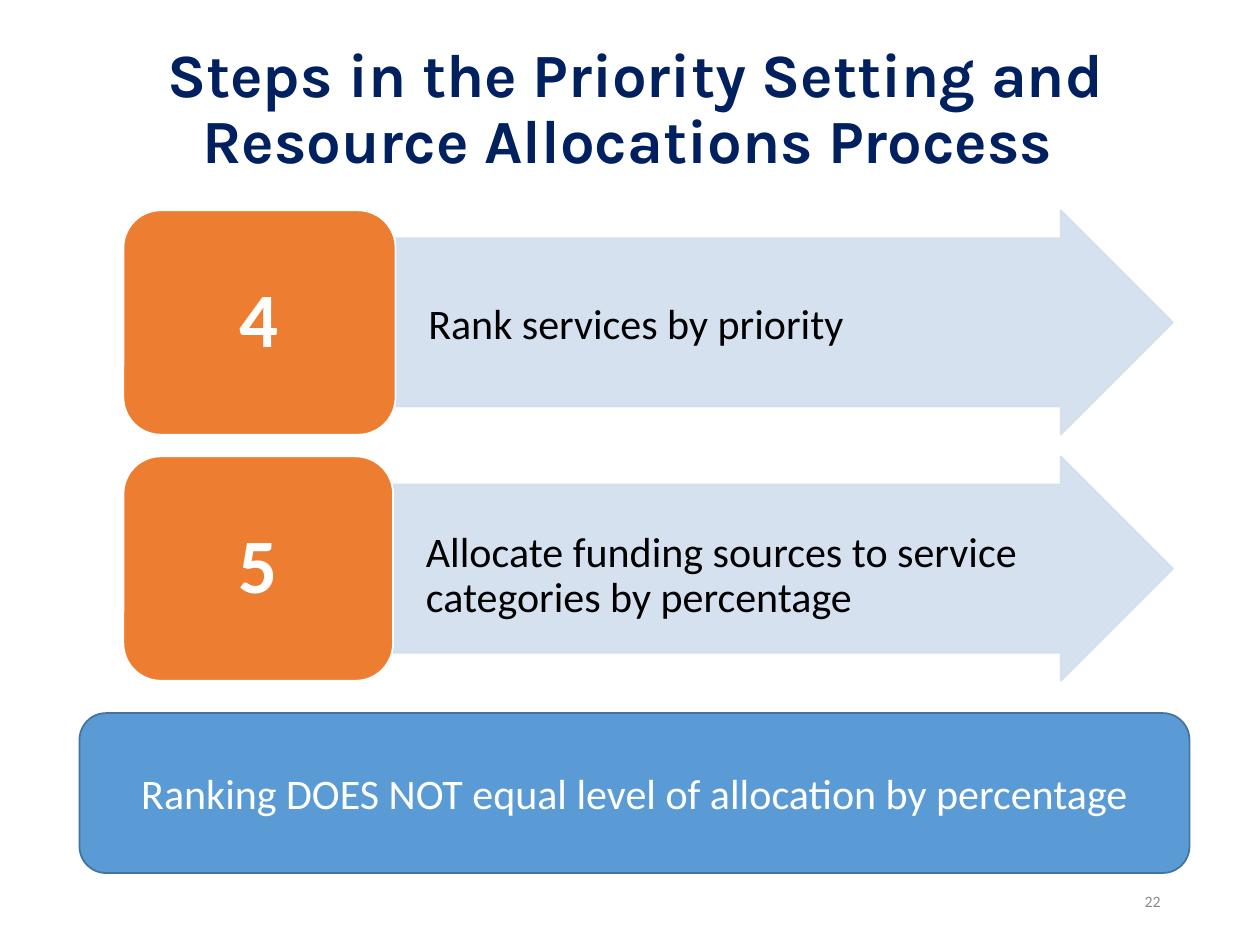
from dataclasses import dataclass

import pptx
import pptx.dml.color
import pptx.enum.shapes
import pptx.enum.text
import pptx.oxml.ns
import pptx.util
from lxml import etree

Pt = pptx.util.Pt
PRESET = pptx.enum.shapes.MSO_SHAPE
ALIGN = pptx.enum.text.PP_ALIGN
MIDDLE = pptx.enum.text.MSO_ANCHOR.MIDDLE

STEP_LEFT, STEP_RIGHT = 70.56, 670.3
STEP_TOP, STEP_HEIGHT, STEP_PITCH = 120.2, 128.2, 140.6


@dataclass
class Box:
    left: float
    top: float
    width: float
    height: float


@dataclass
class Style:
    size: float
    color: str
    font: str = "Calibri"
    bold: bool = False
    align: ALIGN = ALIGN.CENTER
    line_spacing: float = 1.0
    insets: tuple[float, float, float, float] = (7.2, 3.6, 7.2, 3.6)


@dataclass
class Step:
    number: str
    action: str
    number_width: float
    line_spacing: float = 1.0
    text_drop: float = 0


def set_color(color_format, hex_color: str, opacity: int = 100) -> None:
    """Colour a solid fill; opacity is in percent."""
    color_format.solid()
    color_format.fore_color.rgb = pptx.dml.color.RGBColor.from_string(hex_color)
    if opacity < 100:
        parent = color_format._xPr
        rgb = parent.find(".//" + pptx.oxml.ns.qn("a:srgbClr"))
        etree.SubElement(rgb, pptx.oxml.ns.qn("a:alpha"), val=str(opacity * 1000))


def write(shape, text: str, style: Style) -> None:
    frame = shape.text_frame
    frame.text = text
    frame.word_wrap = True
    frame.vertical_anchor = MIDDLE
    (frame.margin_left, frame.margin_top,
     frame.margin_right, frame.margin_bottom) = map(Pt, style.insets)
    paragraph = frame.paragraphs[0]
    paragraph.alignment = style.align
    paragraph.line_spacing = style.line_spacing
    font = paragraph.runs[0].font
    font.name, font.size, font.bold = style.font, Pt(style.size), style.bold
    set_color(font.fill, style.color)


def add_label(slide, box: Box, text: str, style: Style) -> None:
    label = slide.shapes.add_textbox(Pt(box.left), Pt(box.top), Pt(box.width), Pt(box.height))
    write(label, text, style)


def add_panel(slide, preset: PRESET, box: Box, fill: str, line: str,
              text: str, style: Style, opacity: int = 100):
    panel = slide.shapes.add_shape(
        preset, Pt(box.left), Pt(box.top), Pt(box.width), Pt(box.height))
    panel.shadow.inherit = False
    set_color(panel.fill, fill, opacity)
    set_color(panel.line.fill, line, opacity)
    panel.line.width = Pt(1)
    write(panel, text, style)
    return panel


def add_step(slide, step: Step, top: float) -> None:
    arrow_left = STEP_LEFT + step.number_width
    arrow = add_panel(
        slide, PRESET.RIGHT_ARROW,
        Box(arrow_left, top, STEP_RIGHT - arrow_left, STEP_HEIGHT),
        "D2DEEF", "D2DEEF", step.action,
        Style(24, "000000", align=ALIGN.LEFT, line_spacing=step.line_spacing,
              insets=(18.7, 0.7 + step.text_drop, 0.7, 0.7)),
        opacity=90)
    arrow.adjustments[0] = 0.75
    add_panel(
        slide, PRESET.ROUNDED_RECTANGLE,
        Box(STEP_LEFT, top, step.number_width, STEP_HEIGHT),
        "ED7D31", "FFFFFF", step.number,
        Style(44, "FFFFFF", bold=True, line_spacing=0.9, insets=(13, 6.5, 13, 6.5)))


def main() -> None:
    deck = pptx.Presentation()
    deck.slide_width, deck.slide_height = Pt(720), Pt(540)
    slide = deck.slides.add_slide(deck.slide_layouts[6])

    # Slide number and title
    add_label(slide, Box(508.3, 500.4, 162, 28.8), "22",
              Style(9, "898989", align=ALIGN.RIGHT))
    add_label(slide, Box(52.6, 18.7, 620.6, 89.3),
              "Steps in the Priority Setting and Resource Allocations Process ",
              Style(35.1, "002060", font="Karla", bold=True, line_spacing=0.9))

    # Numbered steps
    steps = [
        Step("4", "Rank services by priority", 155.5),
        Step("5", "Allocate funding sources to service categories by percentage",
             154.1, line_spacing=0.9, text_drop=9),
    ]
    for row, step in enumerate(steps):
        add_step(slide, step, STEP_TOP + row * STEP_PITCH)

    # Key message
    add_panel(slide, PRESET.ROUNDED_RECTANGLE, Box(45.4, 407.5, 634.3, 91.4),
              "5B9BD5", "43739E",
              "Ranking DOES NOT equal level of allocation by percentage",
              Style(24, "FFFFFF"))

    deck.save("out.pptx")


if __name__ == "__main__":
    main()
